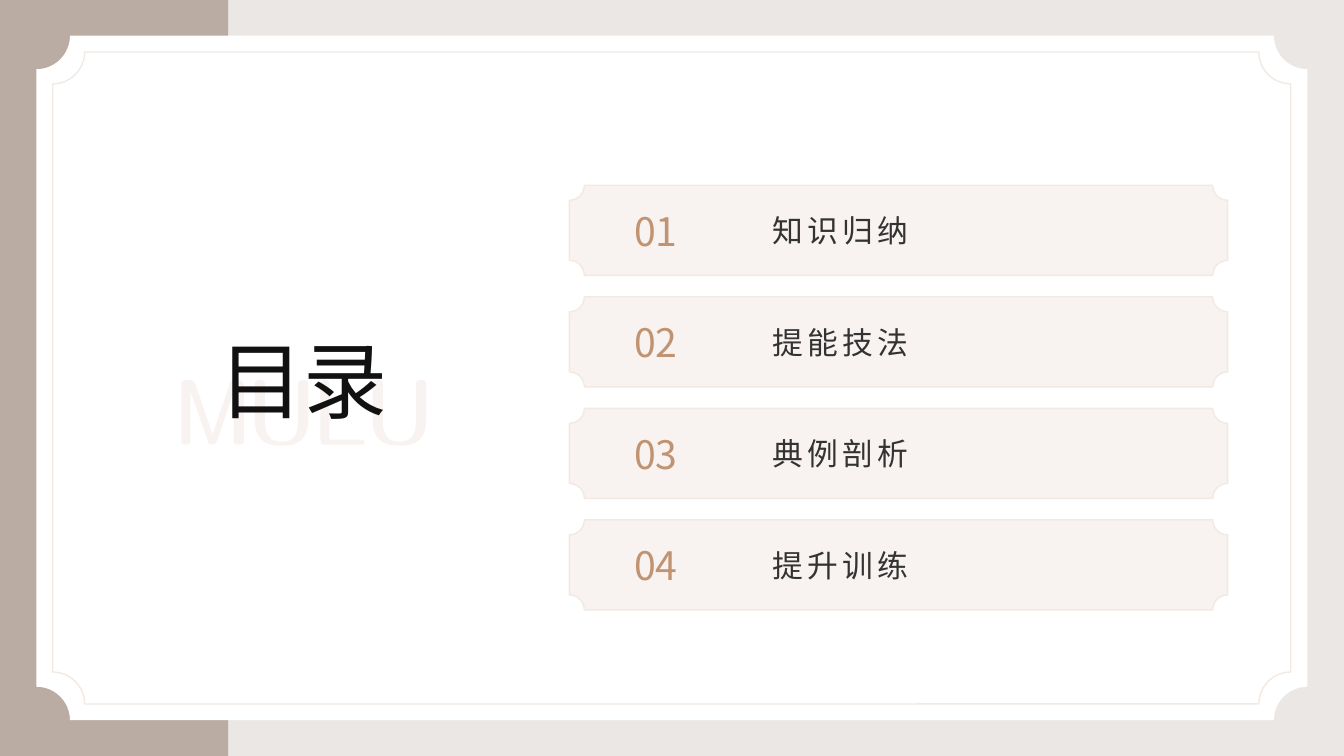
import math

from lxml import etree
from pptx import Presentation
from pptx.dml.color import RGBColor
from pptx.enum import shapes, text
from pptx.oxml.ns import qn
from pptx.util import Cm, Pt

# Content
TITLE = "目录"
CHAPTERS = ["知识归纳", "提能技法", "典例剖析", "提升训练"]
FONT = "Noto Sans CJK SC"
COLORS = {
    "backdrop": "EBE7E4", "band": "BAACA2", "card": "FFFFFF", "frame": "E6D4C7",
    "panel": "F2E9E3", "accent": "C09372", "title": "111111", "label": "333333",
}
PLAQUE, RECT = shapes.MSO_SHAPE.PLAQUE, shapes.MSO_SHAPE.RECTANGLE

# Outlines of the pale letters behind the title, in hundredths of an inch
LETTER_M = [(0, 4), (1, 1), (4, 0), (9, 0), (12, 1), (14, 4), (31, 54), (48, 4),
            (49, 1), (52, 0), (58, 0), (60, 1), (62, 4), (62, 61), (61, 63), (58, 64),
            (55, 64), (53, 63), (52, 61), (52, 11), (36, 59), (34, 63), (32, 64),
            (30, 64), (27, 63), (26, 59), (9, 11), (9, 61), (8, 63), (6, 64),
            (3, 64), (1, 63), (0, 61)]
LETTER_L = [(0, 3), (1, 1), (3, 0), (6, 0), (8, 1), (9, 3), (9, 59), (42, 59),
            (43, 60), (44, 61), (44, 63), (42, 64), (4, 64), (1, 63), (0, 59)]


def bowl(center_y, radius_x, radius_y):
    """Lower half of a squarish ellipse, from left to right."""
    curve = []
    for step in range(25):
        angle = math.pi * step / 24
        x, y = math.cos(angle), math.sin(angle)
        curve.append((26.5 - math.copysign(abs(x) ** 0.77, x) * radius_x,
                      center_y + abs(y) ** 0.77 * radius_y))
    return curve


def letter_u():
    left_tip = [(10, 3), (9, 1), (7, 0), (3, 0), (1, 1), (0, 3)]
    right_tip = [(53 - x, y) for x, y in reversed(left_tip)]
    return left_tip + bowl(38, 26.5, 27) + right_tip + bowl(39, 16.5, 22)[::-1]


LETTERS = [(0, LETTER_M), (73, letter_u()), (138, LETTER_L), (190, letter_u())]


def set_color(color_format, name, opacity=100):
    color_format.rgb = RGBColor.from_string(COLORS[name])


def paint(fill, name, opacity=100):
    fill.solid()
    fill.fore_color.rgb = RGBColor.from_string(COLORS[name])
    if opacity < 100:
        color = fill._xPr.find(qn("a:solidFill"))[0]
        etree.SubElement(color, qn("a:alpha")).set("val", str(opacity * 1000))


def style(part, fill=None, fill_opacity=100, line=None, line_opacity=100):
    part.shadow.inherit = False
    if fill:
        paint(part.fill, fill, fill_opacity)
    else:
        part.fill.background()
    if line:
        part.line.width = Pt(1)
        paint(part.line.fill, line, line_opacity)
    else:
        part.line.fill.background()


def add_part(slide, kind, box, notch=None, **look):
    part = slide.shapes.add_shape(kind, *map(Cm, box))
    if notch:
        part.adjustments[0] = notch
    style(part, **look)


def write(part, words, size, color, align, anchor, wrap=True, spacing=0):
    frame = part.text_frame
    frame.text = words
    frame.auto_size = text.MSO_AUTO_SIZE.NONE
    frame.word_wrap = wrap
    frame.vertical_anchor = anchor
    frame.margin_left = frame.margin_right = frame.margin_top = frame.margin_bottom = 0
    paragraph = frame.paragraphs[0]
    paragraph.alignment = align
    font = paragraph.runs[0].font
    font.size, font.name = Pt(size), FONT
    font.color.rgb = RGBColor.from_string(COLORS[color])
    properties = paragraph.runs[0]._r.get_or_add_rPr()
    etree.SubElement(properties, qn("a:ea")).set("typeface", FONT)
    if spacing:
        properties.set("spc", str(spacing * 100))


def add_letters(slide, left, top):
    builder = None
    for offset, outline in LETTERS:
        points = [((x + offset) * 10, y * 10) for x, y in outline]
        if builder is None:
            builder = slide.shapes.build_freeform(*points[0], scale=Cm(0.00254))
        else:
            builder.move_to(*points[0])
        builder.add_line_segments(points[1:], close=True)
    style(builder.convert_to_shape(Cm(left), Cm(top)), fill="accent", fill_opacity=10)


def main():
    deck = Presentation()
    deck.slide_width, deck.slide_height = Cm(33.87), Cm(19.05)
    slide = deck.slides.add_slide(deck.slide_layouts[5])

    # Backdrop, side band and framed card
    add_part(slide, RECT, (0, 0, 33.87, 19.05), fill="backdrop")
    add_part(slide, RECT, (0, 0, 5.75, 19.05), fill="band")
    add_part(slide, PLAQUE, (0.92, 0.9, 32.03, 17.25), 0.049, fill="card")
    add_part(slide, PLAQUE, (1.33, 1.31, 31.2, 16.43), 0.049,
             line="frame", line_opacity=50)

    # Title in front of the pale letters
    add_letters(slide, 4.57, 9.58)
    title = slide.shapes.title
    title.left, title.top, title.width, title.height = map(Cm, (4.83, 7.82, 5.66, 3))
    write(title, TITLE, 60, "title", text.PP_ALIGN.CENTER, text.MSO_ANCHOR.BOTTOM)
    slide.shapes._spTree.append(title._element)

    # Chapter rows
    first_top, pitch, height = 4.67, 2.81, 2.27
    middle = text.MSO_ANCHOR.MIDDLE
    for index, chapter in enumerate(CHAPTERS):
        top = first_top + index * pitch
        add_part(slide, PLAQUE, (14.35, top, 16.59, height),
                 fill="panel", fill_opacity=50, line="panel")
        number = slide.shapes.add_textbox(*map(Cm, (15.11, top + 0.1, 2.84, 2.08)))
        write(number, f"{index + 1:02}", 28, "accent", text.PP_ALIGN.CENTER, middle,
              wrap=False)
        label = slide.shapes.add_textbox(*map(Cm, (19.48, top + 0.12, 11.46, 2.03)))
        write(label, chapter, 22, "label", text.PP_ALIGN.LEFT, middle, spacing=3)

    deck.save("out.pptx")


if __name__ == "__main__":
    main()
